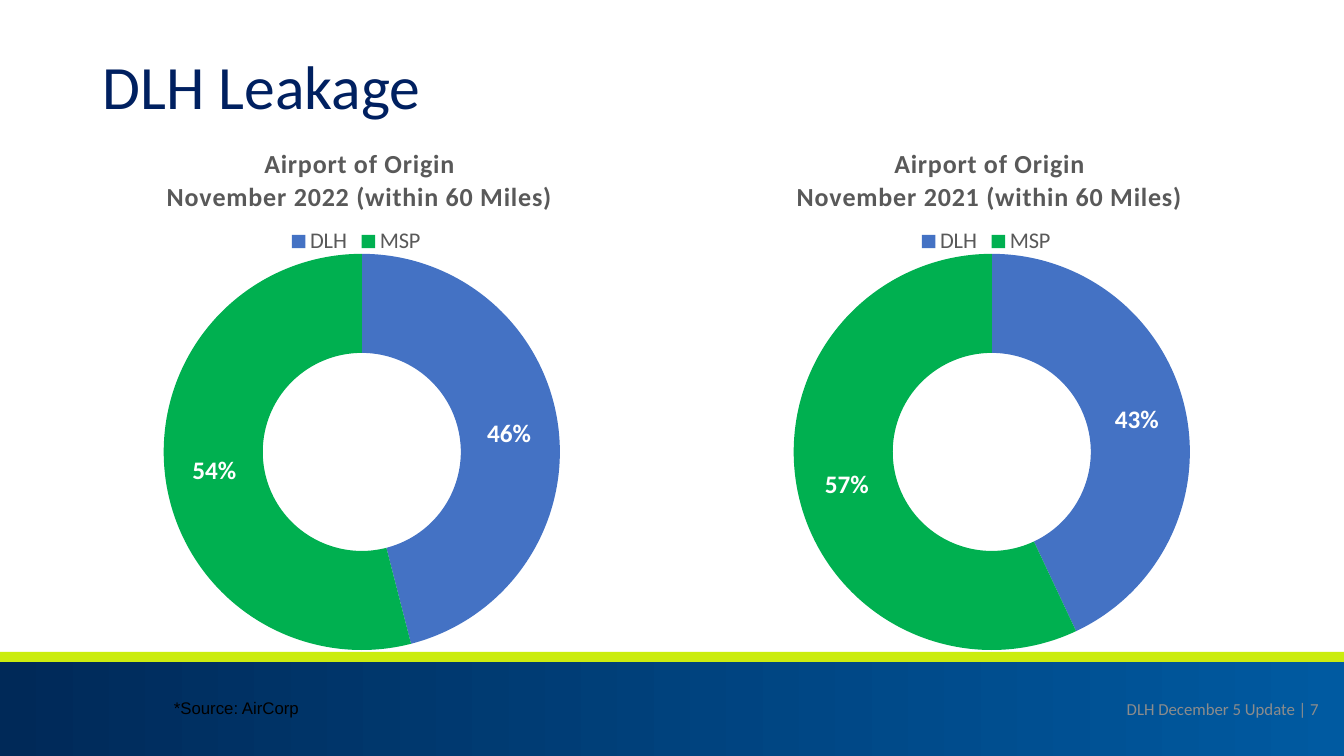
import pptx
import pptx.util
import pptx.oxml
import pptx.chart.data
import pptx.dml.color
import pptx.enum.chart
import pptx.enum.shapes
import pptx.enum.text
from dataclasses import dataclass

AIRPORTS = ("DLH", "MSP")
SHARES = [
    ("November 2022 (within 60 Miles)", (46, 54)),
    ("November 2021 (within 60 Miles)", (43, 57)),
]
CHART_HEADING = "Airport of Origin"
CHART_LEFT, CHART_TOP, CHART_STEP = 55, 122, 630
CHART_WIDTH, CHART_HEIGHT = 604, 534
LAYOUTS = [
    ("c:title", "c:tx", {"x": 0.18, "y": 0.04}),
    ("c:legend", "c:legendPos", {"x": 0.38, "y": 0.19}),
    ("c:plotArea", None, {"x": 0.18, "y": 0.247, "w": 0.656, "h": 0.742}),
]
PAGE_WIDTH, PAGE_HEIGHT = 1344, 756
STRIPE_TOP, FOOTER_TOP = 652, 662
PX = 914400 / 100.8


@dataclass(frozen=True)
class Theme:
    font: str = "Calibri"
    source_font: str = "Arial"
    navy: str = "002060"
    footer_dark: str = "002958"
    footer_light: str = "005AA1"
    lime: str = "CBEC0F"
    gray: str = "595959"
    footer_gray: str = "8C8C8C"
    black: str = "000000"
    white: str = "FFFFFF"
    slices: tuple = ("4472C4", "00B050")
    title_size: float = 44
    heading_size: float = 18.6
    label_size: float = 18
    legend_size: float = 16
    small_size: float = 12
    chart_size: float = 10


THEME = Theme()
TEXTS = [
    ("DLH Leakage", (93, 12, 1159, 146), THEME.font, THEME.title_size, THEME.navy, "LEFT", "MIDDLE"),
    ("*Source: AirCorp", (164, 693, 324, 30), THEME.source_font, THEME.small_size, THEME.black, "LEFT", "TOP"),
    ("DLH December 5 Update | 7", (1029, 685, 300, 47), THEME.font, THEME.small_size, THEME.footer_gray, "RIGHT", "MIDDLE"),
]


def px(*lengths):
    return [round(length * PX) for length in lengths]


def rgb(value):
    return pptx.dml.color.RGBColor.from_string(value)


def style(font, name, size, color, bold=False):
    font.name = name
    font.size = pptx.util.Pt(size)
    font.color.rgb = rgb(color)
    font.bold = bold


def add_band(page, top, bottom):
    band = page.shapes.add_shape(
        pptx.enum.shapes.MSO_SHAPE.RECTANGLE, *px(0, top, PAGE_WIDTH, bottom - top))
    band.shadow.inherit = False
    band.line.fill.background()
    return band


def add_text(page, text, frame, name, size, color, align, anchor):
    box = page.shapes.add_textbox(*px(*frame))
    box.text_frame.word_wrap = True
    box.text_frame.vertical_anchor = getattr(pptx.enum.text.MSO_ANCHOR, anchor)
    para = box.text_frame.paragraphs[0]
    para.text = text
    para.alignment = getattr(pptx.enum.text.PP_ALIGN, align)
    style(para.font, name, size, color)


def set_layout(chart, part, predecessor, numbers):
    parent = chart.element.xpath("c:chart/" + part)[0]
    for old in parent.xpath("c:layout"):
        parent.remove(old)
    inner = '<c:layoutTarget val="inner"/>' if "w" in numbers else ""
    modes = "".join(f'<c:{axis}Mode val="edge"/>' for axis in "xy")
    values = "".join(f'<c:{key} val="{value}"/>' for key, value in numbers.items())
    layout = pptx.oxml.parse_xml(
        '<c:layout xmlns:c="http://schemas.openxmlformats.org/drawingml/2006/chart">'
        f"<c:manualLayout>{inner}{modes}{values}</c:manualLayout></c:layout>")
    if predecessor:
        parent.xpath(predecessor)[0].addnext(layout)
    else:
        parent.insert(0, layout)


def add_doughnut(page, left, period, shares):
    data = pptx.chart.data.CategoryChartData()
    data.categories = AIRPORTS
    data.add_series("Series 1", shares)
    chart = page.shapes.add_chart(
        pptx.enum.chart.XL_CHART_TYPE.DOUGHNUT,
        *px(left, CHART_TOP, CHART_WIDTH, CHART_HEIGHT), data).chart
    style(chart.font, THEME.font, THEME.chart_size, THEME.black)

    heading = chart.chart_title.text_frame
    heading.text = f"{CHART_HEADING}\n{period}"
    for para in heading.paragraphs:
        style(para.font, THEME.font, THEME.heading_size, THEME.gray, True)
        for span in para.runs:
            style(span.font, THEME.font, THEME.heading_size, THEME.gray, True)
            span.font._element.set("spc", "50")

    chart.has_legend = True
    chart.legend.position = pptx.enum.chart.XL_LEGEND_POSITION.TOP
    chart.legend.include_in_layout = False
    style(chart.legend.font, THEME.font, THEME.legend_size, THEME.gray)

    plot = chart.plots[0]
    plot.vary_by_categories = True
    for index, color in enumerate(THEME.slices):
        point = plot.series[0].points[index]
        point.format.fill.solid()
        point.format.fill.fore_color.rgb = rgb(color)
        point.format.line.fill.background()
    plot.has_data_labels = True
    labels = plot.data_labels
    labels.show_percentage = True
    labels.show_value = False
    labels.number_format = "0%"
    labels.number_format_is_linked = False
    style(labels.font, THEME.font, THEME.label_size, THEME.white, True)
    chart.element.xpath(".//c:holeSize")[0].set("val", "50")

    for part, predecessor, numbers in LAYOUTS:
        set_layout(chart, part, predecessor, numbers)


def main():
    deck = pptx.Presentation()
    deck.slide_width, deck.slide_height = px(PAGE_WIDTH, PAGE_HEIGHT)
    page = deck.slides.add_slide(deck.slide_layouts[6])

    footer = add_band(page, FOOTER_TOP, PAGE_HEIGHT)
    footer.fill.gradient()
    footer.fill.gradient_angle = 0
    for stop, color in zip(footer.fill.gradient_stops, (THEME.footer_dark, THEME.footer_light)):
        stop.color.rgb = rgb(color)
    stripe = add_band(page, STRIPE_TOP, FOOTER_TOP)
    stripe.fill.solid()
    stripe.fill.fore_color.rgb = rgb(THEME.lime)

    for text in TEXTS:
        add_text(page, *text)
    for index, (period, shares) in enumerate(SHARES):
        add_doughnut(page, CHART_LEFT + index * CHART_STEP, period, shares)
    deck.save("out.pptx")


if __name__ == "__main__":
    main()
